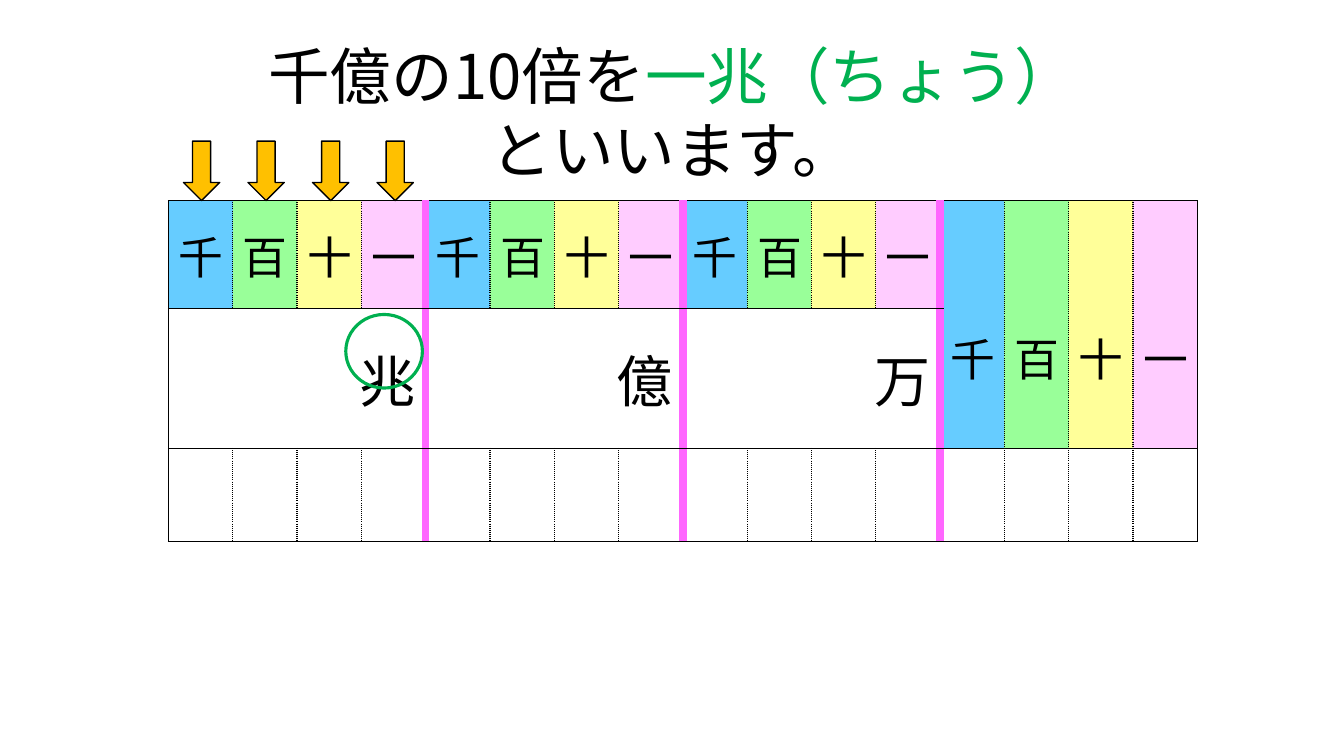
"""Build a place-value chart slide introducing one trillion in Japanese numerals."""
from pptx import Presentation
from pptx.dml.color import RGBColor
from pptx.enum.shapes import MSO_SHAPE
from pptx.enum.text import MSO_ANCHOR, PP_ALIGN
from pptx.oxml import parse_xml
from pptx.oxml.ns import nsdecls
from pptx.util import Inches, Pt

BLACK = RGBColor(0x00, 0x00, 0x00)
WHITE = RGBColor(0xFF, 0xFF, 0xFF)
GREEN = RGBColor(0x00, 0xB0, 0x50)
ORANGE = RGBColor(0xFF, 0xC0, 0x00)
MAGENTA = RGBColor(0xFF, 0x66, 0xFF)
DIGIT_COLORS = [RGBColor(0x66, 0xCC, 0xFF), RGBColor(0x99, 0xFF, 0x99),
                RGBColor(0xFF, 0xFF, 0x99), RGBColor(0xFF, 0xCC, 0xFF)]
FONT = "Noto Sans CJK JP"
DIGITS = "千百十一"
UNITS = "兆億万"
COLUMNS = 16
COLUMN_WIDTH = 0.638
CHART_LEFT, CHART_TOP = 1.67, 1.99
ROW_HEIGHTS = [1.07, 0.92, 0.92]
SOLID = (BLACK, 1, "solid")
DOTTED = (BLACK, 1, "sysDot")
DIVIDER = (MAGENTA, 6, "solid")


def add_text(paragraph, text, size, color=BLACK):
    run = paragraph.add_run()
    run.text = text
    for attribute, value in {"name": FONT, "size": Pt(size)}.items():
        setattr(run.font, attribute, value)
    run.font.color.rgb = color
    run._r.get_or_add_rPr().append(
        parse_xml(f'<a:ea {nsdecls("a")} typeface="{FONT}"/>'))


def set_border(cell, side, style):
    color, width, dash = style
    cell._tc.get_or_add_tcPr().append(parse_xml(
        f'<a:ln{side} {nsdecls("a")} w="{Pt(width)}"><a:solidFill>'
        f'<a:srgbClr val="{color}"/></a:solidFill>'
        f'<a:prstDash val="{dash}"/></a:ln{side}>'))


prs = Presentation()
prs.slide_width, prs.slide_height = Inches(13.33), Inches(7.5)
slide = prs.slides.add_slide(prs.slide_layouts[5])

title = slide.shapes.title
title_box = {"left": 2.46, "top": 0.33, "width": 8.42, "height": 1.58}
for attribute, value in title_box.items():
    setattr(title, attribute, Inches(value))
title.text_frame.word_wrap = True
title.text_frame.vertical_anchor = MSO_ANCHOR.TOP
sentence = title.text_frame.paragraphs[0]
sentence.alignment = PP_ALIGN.CENTER
for phrase, color in [("千億の10倍を", BLACK), ("一兆（ちょう）", GREEN),
                      ("といいます。", BLACK)]:
    add_text(sentence, phrase, 44, color)

place_values = slide.shapes.add_table(
    len(ROW_HEIGHTS), COLUMNS, Inches(CHART_LEFT), Inches(CHART_TOP),
    Inches(COLUMN_WIDTH * COLUMNS), Inches(sum(ROW_HEIGHTS))).table
place_values.first_row = place_values.horz_banding = False
for column in place_values.columns:
    column.width = Inches(COLUMN_WIDTH)
for row, height in zip(place_values.rows, ROW_HEIGHTS):
    row.height = Inches(height)

edges = [DIVIDER if i % 4 == 0 else DOTTED for i in range(COLUMNS + 1)]
edges[0] = edges[COLUMNS] = SOLID
for r in range(len(ROW_HEIGHTS)):
    for c in range(COLUMNS):
        cell = place_values.cell(r, c)
        ones_group = c >= 12
        unit_row = r == 1 and not ones_group
        right = edges[c // 4 * 4 + 4] if unit_row else edges[c + 1]
        for side, style in {"L": edges[c], "R": right, "T": SOLID, "B": SOLID}.items():
            set_border(cell, side, style)
        cell.vertical_anchor = MSO_ANCHOR.MIDDLE
        cell.fill.solid()
        colored = r == 0 or (r == 1 and ones_group)
        cell.fill.fore_color.rgb = DIGIT_COLORS[c % 4] if colored else WHITE
        paragraph = cell.text_frame.paragraphs[0]
        if r == 0:
            cell._tc.get_or_add_tcPr().set("vert", "eaVert")
            paragraph.alignment = PP_ALIGN.LEFT if ones_group else PP_ALIGN.CENTER
            add_text(paragraph, (" " if ones_group else "") + DIGITS[c % 4], 32)
            if ones_group:
                cell.merge(place_values.cell(1, c))
        elif unit_row and c % 4 == 0:
            paragraph.alignment = PP_ALIGN.RIGHT
            add_text(paragraph, UNITS[c // 4], 40)
            cell.merge(place_values.cell(1, c + 3))

for i in range(4):
    arrow = slide.shapes.add_shape(
        MSO_SHAPE.DOWN_ARROW, Inches(1.82 + 0.64 * i), Inches(1.4),
        Inches(0.36), Inches(0.59))
    arrow.shadow.inherit = False
    arrow.fill.solid()
    arrow.fill.fore_color.rgb = ORANGE
    arrow.line.color.rgb = BLACK
    arrow.line.width = Pt(1)

circle = slide.shapes.add_shape(
    MSO_SHAPE.OVAL, Inches(3.43), Inches(3.12), Inches(0.76), Inches(0.73))
circle.shadow.inherit = False
circle.fill.background()
circle.line.color.rgb = GREEN
circle.line.width = Pt(2.25)

prs.save("out.pptx")
